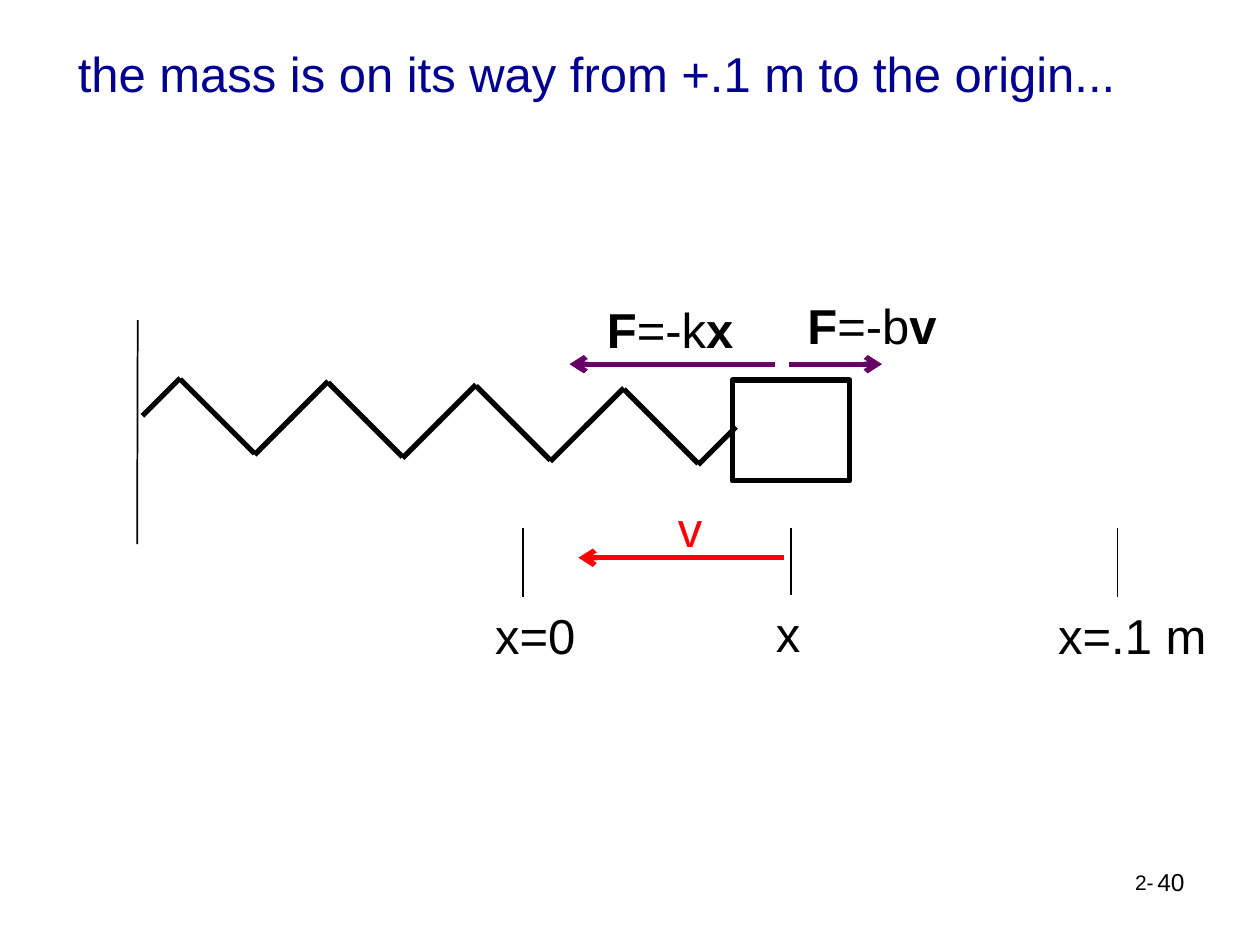
from lxml import etree
from pptx import Presentation
from pptx.dml.color import RGBColor
from pptx.enum.shapes import MSO_CONNECTOR, MSO_SHAPE
from pptx.enum.text import PP_ALIGN
from pptx.oxml.ns import qn
from pptx.util import Pt

STRAIGHT = MSO_CONNECTOR.STRAIGHT
RECTANGLE = MSO_SHAPE.RECTANGLE
LEFT, RIGHT = PP_ALIGN.LEFT, PP_ALIGN.RIGHT
COLOURS = {"ink": "000000", "title": "000090", "force": "660066", "velocity": "FF0000"}


def add_line(x1, y1, x2, y2, width=3, colour="ink", arrow=False):
    line = page.shapes.add_connector(STRAIGHT, Pt(x1), Pt(y1), Pt(x2), Pt(y2))
    line.line.width = Pt(width)
    line.line.color.rgb = RGBColor.from_string(COLOURS[colour])
    properties = line._element.spPr
    if arrow:
        etree.SubElement(properties.find(qn("a:ln")), qn("a:tailEnd"), type="arrow")
    etree.SubElement(properties, qn("a:effectLst"))


def add_text(left, top, width, height, parts, size=28, colour="ink", wrap=False, align=LEFT):
    """Write (text, bold) parts as one paragraph."""
    box = page.shapes.add_textbox(Pt(left), Pt(top), Pt(width), Pt(height))
    box.text_frame.word_wrap = wrap
    para = box.text_frame.paragraphs[0]
    para.alignment = align
    para.font.name = "Arial"
    para.font.size = Pt(size)
    para.font.color.rgb = RGBColor.from_string(COLOURS[colour])
    for text, bold in parts:
        span = para.add_run()
        span.text = text
        span.font.bold = bold


deck = Presentation()
deck.slide_width, deck.slide_height = Pt(720), Pt(540)
page = deck.slides.add_slide(deck.slide_layouts[6])

# Page number
add_text(641.5, 493.2, 34.6, 21.6, [("2-", False)], size=12, wrap=True)
add_text(516.2, 491.8, 167.8, 37.4, [("40", False)], size=14, wrap=True, align=RIGHT)

# Title
add_text(37.4, 21.6, 682.6, 41, [("the mass is on its way from +.1 m to the origin...", False)],
         colour="title", wrap=True)

# Mass and wall
mass = page.shapes.add_shape(RECTANGLE, Pt(418.4), Pt(217.2), Pt(67.2), Pt(57.6))
mass.shadow.inherit = False
mass.fill.background()
mass.line.width = Pt(3)
mass.line.color.rgb = RGBColor.from_string(COLOURS["ink"])
add_line(78.7, 182.9, 78.4, 311, width=1)

# Spring: four equal coils, sinking slightly to the right
COIL_STROKES = [
    (0, 21.6, 21.6, 0),
    (43.2, 22.3, 21.6, 0.7),
    (42.5, 21.6, 64.1, 43.2),
    (85.7, 22.3, 64.1, 43.9),
]
for coil in range(4):
    x, y = 81.4 + 84.5 * coil, 216 + 1.9 * coil
    for x1, y1, x2, y2 in COIL_STROKES:
        add_line(x + x1, y + y1, x + x2, y + y2)

# Position marks and their labels
for x, bottom, label, left, top, width in [
    (298.7, 341.3, "x=0", 275.8, 342.7, 61.2),
    (452, 339.8, "x", 436.3, 341.3, 28.8),
    (638.6, 341.3, "x=.1 m", 597.6, 342.7, 100.1),
]:
    add_line(x, 301.7, x, bottom, width=1)
    add_text(left, top, width, 41, [(label, False)])

# Velocity
add_line(447.8, 318.7, 330.5, 318.7, colour="velocity", arrow=True)
add_text(380.2, 281.5, 29.5, 41, [("v", False)], colour="velocity")

# Spring force and damping force
for start, end, left, top, width, middle, vector in [
    (442.8, 325.4, 339.8, 167.8, 88.6, "=-k", "x"),
    (450.7, 504, 454.3, 165.6, 89.3, "=-b", "v"),
]:
    add_line(start, 208.1, end, 208.1, colour="force", arrow=True)
    add_text(left, top, width, 41, [("F", True), (middle, False), (vector, True)])

deck.save("out.pptx")
